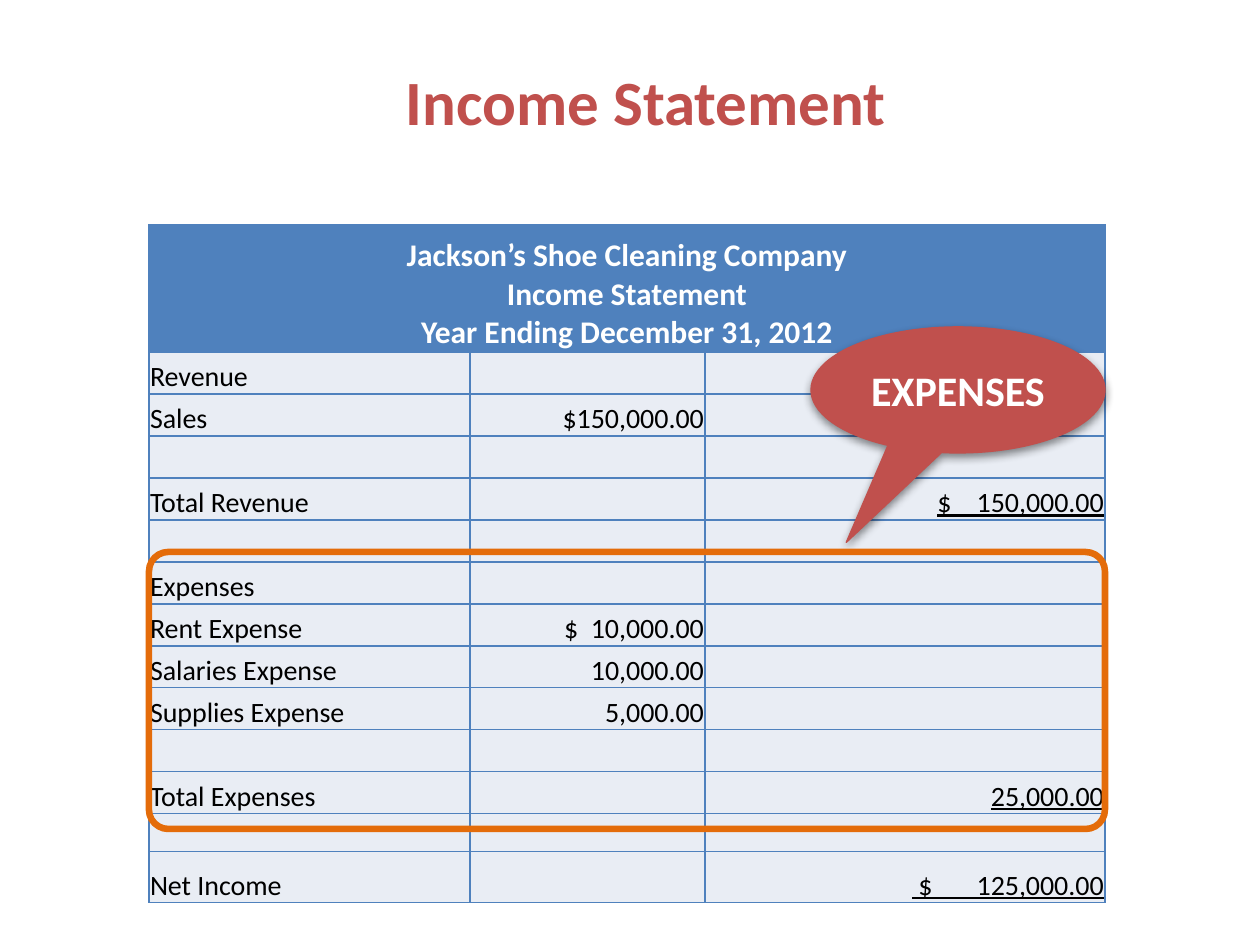
import pptx
import pptx.util
import pptx.oxml
import pptx.oxml.ns
from pptx.dml.color import RGBColor
from pptx.enum.shapes import MSO_SHAPE
from pptx.enum.text import MSO_ANCHOR, PP_ALIGN

SCALE = 914400 / 126
FONT = "Calibri"
WHITE = RGBColor(0xFF, 0xFF, 0xFF)
BLACK = RGBColor(0, 0, 0)
RED = RGBColor(0xC0, 0x50, 0x4D)
BLUE = RGBColor(0x4F, 0x81, 0xBD)
PALE = RGBColor(0xE9, 0xED, 0xF4)
ORANGE = RGBColor(0xE4, 0x6C, 0x0A)

HEAD = "Jackson’s Shoe Cleaning Company\nIncome Statement\nYear Ending December 31, 2012"
ROWS = [
    ("Revenue", "", ""),
    ("Sales", "$150,000.00", ""),
    ("", "", ""),
    ("Total Revenue", "", "$    150,000.00"),
    ("", "", ""),
    ("Expenses", "", ""),
    ("Rent Expense", "$  10,000.00", ""),
    ("Salaries Expense", "10,000.00", ""),
    ("Supplies Expense", "5,000.00", ""),
    ("", "", ""),
    ("Total Expenses", "", "25,000.00"),
    ("", "", ""),
    ("Net Income", "", " $       125,000.00"),
]
COLS = [321, 235, 400]
HEIGHTS = [127] + [42] * 11 + [38, 51]


def px(n):
    return pptx.util.Emu(round(n * SCALE))


def make(tag, attrs="", body=""):
    """Parse one DrawingML element."""
    names = pptx.oxml.ns.nsdecls("a")
    return pptx.oxml.parse_xml(f"<a:{tag} {names} {attrs}>{body}</a:{tag}>")


def style(frame, size, color, align, bold=False, line=False):
    for para in frame.paragraphs:
        para.alignment = align
        for run in para.runs:
            font = run.font
            font.name, font.size, font.bold = FONT, pptx.util.Pt(size), bold
            font.color.rgb = color
            if line:
                font.underline = True


def add_title(slide, x, y, w, h):
    frame = slide.shapes.add_textbox(px(x), px(y), px(w), px(h)).text_frame
    frame.word_wrap = True
    frame.vertical_anchor = MSO_ANCHOR.MIDDLE
    frame.text = "Income Statement"
    style(frame, 36, RED, PP_ALIGN.CENTER, bold=True)


def set_cell(cell, text, fill):
    """Fill, inset, border and fill in the text of one cell."""
    cell.margin_left = cell.margin_right = cell.margin_top = px(1)
    cell.margin_bottom = 0
    cell.vertical_anchor = MSO_ANCHOR.BOTTOM
    props = cell._tc.get_or_add_tcPr()
    for side in ("lnL", "lnR", "lnT", "lnB"):
        color = f'<a:solidFill><a:srgbClr val="{BLUE}"/></a:solidFill>'
        props.append(make(side, 'w="12700"', color))
    cell.fill.solid()
    cell.fill.fore_color.rgb = fill
    if text:
        cell.text_frame.text = text
    else:
        # An empty cell still takes its height from its end mark
        cell.text_frame.paragraphs[0]._p.append(make("endParaRPr", 'sz="1600"'))


def add_report(slide, x, y, w, h):
    table = slide.shapes.add_table(
        len(HEIGHTS), len(COLS), px(x), px(y), px(w), px(h)).table
    for col, wide in zip(table.columns, COLS):
        col.width = px(wide)
    for row, high in zip(table.rows, HEIGHTS):
        row.height = px(high)
    for c in range(len(COLS)):
        set_cell(table.cell(0, c), "" if c else HEAD, BLUE)
    table.cell(0, 0).merge(table.cell(0, len(COLS) - 1))
    style(table.cell(0, 0).text_frame, 18, WHITE, PP_ALIGN.CENTER, bold=True)
    for r, texts in enumerate(ROWS, 1):
        for c, text in enumerate(texts):
            cell = table.cell(r, c)
            set_cell(cell, text, PALE)
            align = PP_ALIGN.RIGHT if c else PP_ALIGN.LEFT
            style(cell.text_frame, 16, BLACK, align, line=c == 2)


def add_callout(slide, x, y, w, h):
    shape = slide.shapes.add_shape(
        MSO_SHAPE.OVAL_CALLOUT, px(x), px(y), px(w), px(h))
    shape.adjustments[0], shape.adjustments[1] = -0.38, 1.21
    shape.fill.solid()
    shape.fill.fore_color.rgb = RED
    shape.line.color.rgb = RED
    shape.line.width = pptx.util.Pt(0.8)
    shape.shadow.inherit = False
    effects = shape._element.spPr.find(pptx.oxml.ns.qn("a:effectLst"))
    effects.append(make(
        "outerShdw", 'blurRad="63500" dist="30480" dir="5400000" rotWithShape="0"',
        '<a:srgbClr val="000000"><a:alpha val="45000"/></a:srgbClr>'))
    frame = shape.text_frame
    frame.vertical_anchor = MSO_ANCHOR.MIDDLE
    frame.text = "EXPENSES"
    style(frame, 24, WHITE, PP_ALIGN.CENTER, bold=True)


def add_frame(slide, x, y, w, h):
    shape = slide.shapes.add_shape(
        MSO_SHAPE.ROUNDED_RECTANGLE, px(x), px(y), px(w), px(h))
    shape.adjustments[0] = 0.07
    shape.fill.background()
    shape.line.color.rgb = ORANGE
    shape.line.width = pptx.util.Pt(3.75)
    shape.shadow.inherit = False


def main():
    deck = pptx.Presentation()
    deck.slide_width, deck.slide_height = px(1260), px(945)
    slide = deck.slides.add_slide(deck.slide_layouts[6])
    add_report(slide, 149, 225, sum(COLS), sum(HEIGHTS))
    add_title(slide, 84, 32, 1124, 136)
    add_callout(slide, 811, 327, 294, 126)
    add_frame(slide, 149, 552, 956, 277)
    deck.save("out.pptx")


if __name__ == "__main__":
    main()
